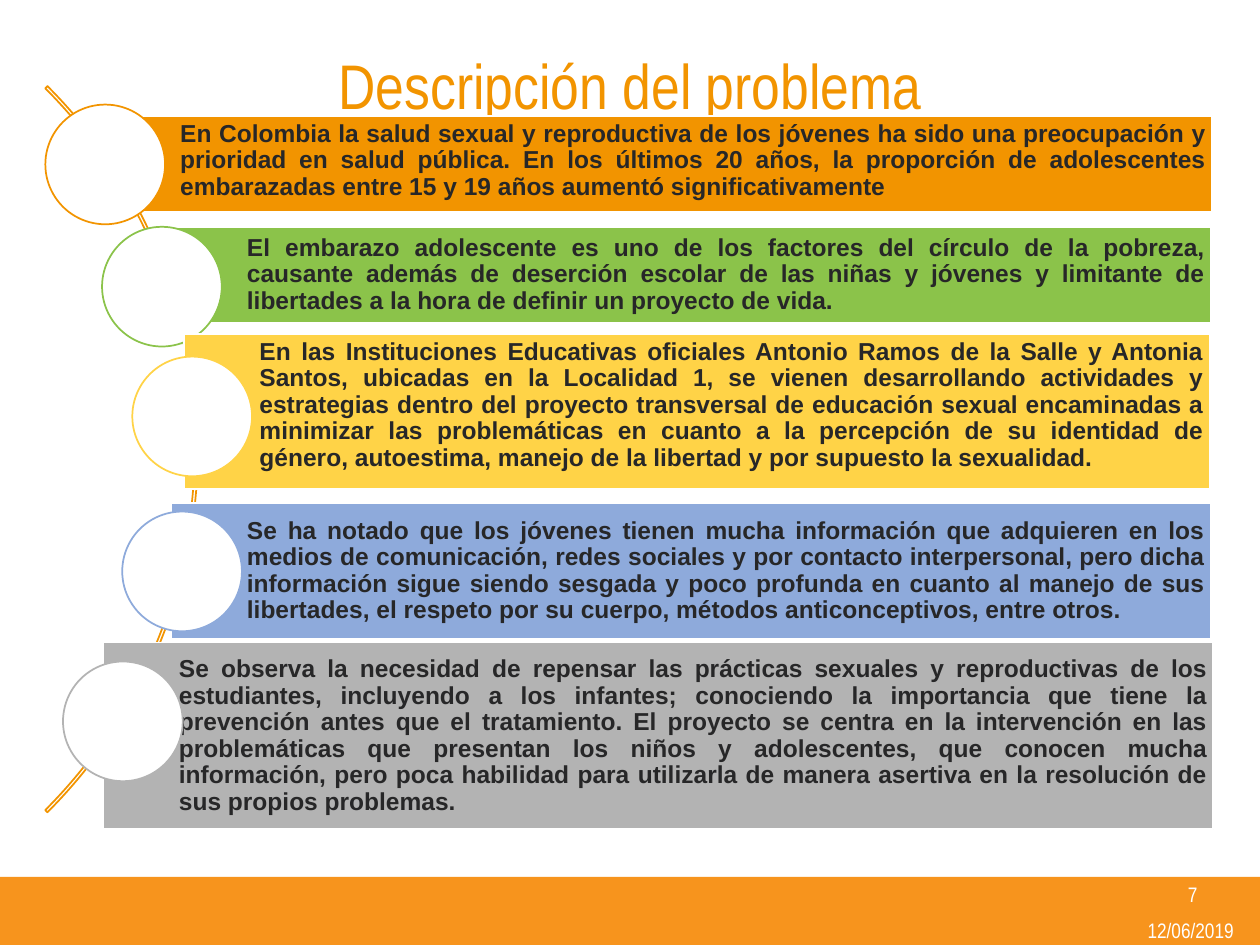
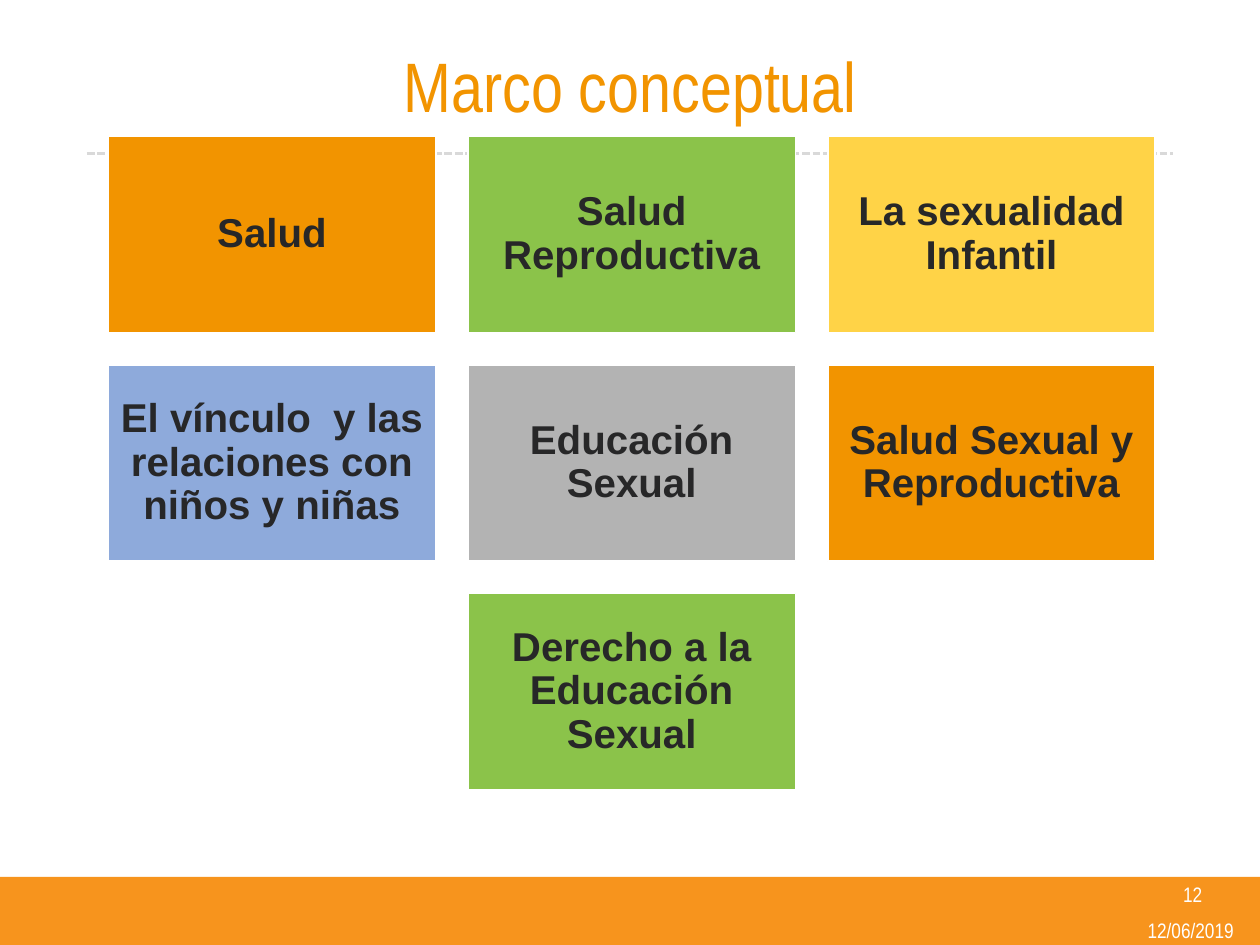
from pptx import Presentation, util as u
from pptx.dml.color import RGBColor
from pptx.enum import dml, shapes, text
from pptx.oxml.ns import qn
from lxml import etree

COLS, ROWS = 100, 75
WIDE, HIGH = u.Inches(10), u.Inches(7.5)
ORANGE, GREEN, GOLD, BLUE, GRAY = "F29400", "8BC34A", "FFD347", "8EAADB", "B3B3B3"
BAND, WHITE, INK, RULE = "F7941D", "FFFFFF", "272728", "D9D9D9"
HEAD, BODY = "Arial Narrow", "Arial"
KIND, ALIGN, ANCHOR = shapes.MSO_SHAPE, text.PP_ALIGN, text.MSO_ANCHOR
DISC = 9.5

STEPS = [
    ((4.7, 2.3, 87.9, 7.6), (0, 1.4), ORANGE, ANCHOR.TOP,
     "En Colombia la salud sexual y reproductiva de los jóvenes ha sido una preocupación y "
     "prioridad en salud pública. En los últimos 20 años, la proporción de adolescentes "
     "embarazadas entre 15 y 19 años aumentó significativamente"),
    ((10, 11.1, 82.5, 7.6), (4.5, 11.1), GREEN, ANCHOR.MIDDLE,
     "El embarazo adolescente es uno de los factores del círculo de la pobreza, causante "
     "además de deserción escolar de las niñas y jóvenes y limitante de libertades a la hora "
     "de definir un proyecto de vida."),
    ((11, 19.6, 81.4, 12.3), (6.9, 21.4), GOLD, ANCHOR.TOP,
     "En las Instituciones Educativas oficiales Antonio Ramos de la Salle y Antonia Santos, "
     "ubicadas en la Localidad 1, se vienen desarrollando actividades y estrategias dentro "
     "del proyecto transversal de educación sexual encaminadas a minimizar las problemáticas "
     "en cuanto a la percepción de su identidad de género, autoestima, manejo de la libertad "
     "y por supuesto la sexualidad."),
    ((10, 33, 82.5, 10.8), (6.1, 33.7), BLUE, ANCHOR.MIDDLE,
     "Se ha notado que los jóvenes tienen mucha información que adquieren en los medios de "
     "comunicación, redes sociales y por contacto interpersonal, pero dicha información sigue "
     "siendo sesgada y poco profunda en cuanto al manejo de sus libertades, el respeto por su "
     "cuerpo, métodos anticonceptivos, entre otros."),
    ((4.6, 44.1, 88.1, 14.8), (1.4, 45.6), GRAY, ANCHOR.MIDDLE,
     "Se observa la necesidad de repensar las prácticas sexuales y reproductivas de los "
     "estudiantes, incluyendo a los infantes; conociendo la importancia que tiene la "
     "prevención antes que el tratamiento. El proyecto se centra en la intervención en las "
     "problemáticas que presentan los niños y adolescentes, que conocen mucha información, "
     "pero poca habilidad para utilizarla de manera asertiva en la resolución de sus propios "
     "problemas."),
]

TOPICS = [
    [("Salud", ORANGE), ("Salud Reproductiva", GREEN), ("La sexualidad Infantil", GOLD)],
    [("El vínculo  y las relaciones con niños y niñas", BLUE), ("Educación Sexual", GRAY),
     ("Salud Sexual y Reproductiva", ORANGE)],
    [("Derecho a la Educación Sexual", GREEN)],
]


def tint(code):
    return RGBColor.from_string(code)


def scale(x, y, w, h):
    return (round(x * WIDE / COLS), round(y * HIGH / ROWS),
            round(w * WIDE / COLS), round(h * HIGH / ROWS))


def shift(box, x, y, w, h):
    return box[0] + x, box[1] + y, w, h


def form(slide, kind, box, fill=None, edge=None):
    item = slide.shapes.add_shape(kind, *scale(*box))
    item.shadow.inherit = False
    if fill:
        item.fill.solid()
        item.fill.fore_color.rgb = tint(fill)
    else:
        item.fill.background()
    if edge:
        item.line.color.rgb = tint(edge)
        item.line.width = u.Pt(1)
    else:
        item.line.fill.background()
    return item


def write(item, words, size, color, face, align=ALIGN.CENTER, anchor=ANCHOR.MIDDLE,
          bold=False, pads=None, lead=None):
    frame = item.text_frame
    frame.word_wrap = True
    frame.vertical_anchor = anchor
    if pads:
        (frame.margin_left, frame.margin_top,
         frame.margin_right, frame.margin_bottom) = [u.Inches(pad) for pad in pads]
    para = frame.paragraphs[0]
    para.alignment = align
    if lead:
        para.line_spacing = lead
    run = para.add_run()
    run.text = words
    run.font.size = u.Pt(size)
    run.font.name = face
    run.font.bold = bold
    run.font.color.rgb = tint(color)


def label(slide, box, words, size, color):
    write(slide.shapes.add_textbox(*scale(*box)), words, size, color, HEAD)


def footer(slide, box, page):
    form(slide, KIND.RECTANGLE, box, BAND)
    label(slide, shift(box, 89.2, 3.2, 10.6, 2.1), "12/06/2019", 12, WHITE)
    label(slide, shift(box, 89.4, -0.1, 10.5, 3), page, 12, WHITE)


def header(slide, box, words, size):
    x, y, w, h = box
    left, base, right, _ = scale(x, y + h, x + w, 0)
    rule = slide.shapes.add_connector(shapes.MSO_CONNECTOR.STRAIGHT, left, base, right, base)
    rule.line.color.rgb = tint(RULE)
    rule.line.width = u.Pt(1.5)
    rule.line.dash_style = dml.MSO_LINE.SQUARE_DOT
    etree.SubElement(rule._element.spPr, qn("a:effectLst"))
    label(slide, (x, y, w, h - 0.1), words, size, ORANGE)


def timeline(slide, box):
    arc = form(slide, KIND.BLOCK_ARC, shift(box, -69.4, -12, 81.5, 81.5), edge=ORANGE)
    for spot, value in enumerate((189, 27, 0.003)):
        arc.adjustments[spot] = value
    for place, dot, color, anchor, words in STEPS:
        bar = form(slide, KIND.RECTANGLE, shift(box, *place), color, WHITE)
        write(bar, words, 14, INK, BODY, ALIGN.JUSTIFY, anchor, True,
              (0.6, 0.04, 0.04, 0.04), 0.9)
        form(slide, KIND.OVAL, shift(box, *dot, DISC, DISC), WHITE, color)


def topics(slide, box, gap=2.55):
    count = len(TOPICS)
    wide = (box[2] - gap * (count - 1)) / count
    high = (box[3] - gap * (count - 1)) / count
    for row, line in enumerate(TOPICS):
        inset = (count - len(line)) / 2
        for col, (words, color) in enumerate(line):
            place = shift(box, (col + inset) * (wide + gap), row * (high + gap), wide, high)
            tile = form(slide, KIND.RECTANGLE, place, color, WHITE)
            write(tile, words, 23, INK, BODY, bold=True, pads=(0.1,) * 4, lead=0.9)


def page(deck, number, title, size, region, box):
    slide = deck.slides.add_slide(deck.slide_layouts[6])
    footer(slide, (0, 69.6, COLS, 5.4), number)
    header(slide, (6.9, 1.3, 86.2, 10.9), title, size)
    region(slide, box)


def main():
    deck = Presentation()
    deck.slide_width, deck.slide_height = WIDE, HIGH
    page(deck, "7", "Descripción del problema", 36, timeline, (3.6, 6.9, 92.7, 58.9))
    page(deck, "12", "Marco conceptual", 40, topics, (8.6, 10.8, 83.1, 51.9))
    deck.save("out.pptx")


if __name__ == "__main__":
    main()
